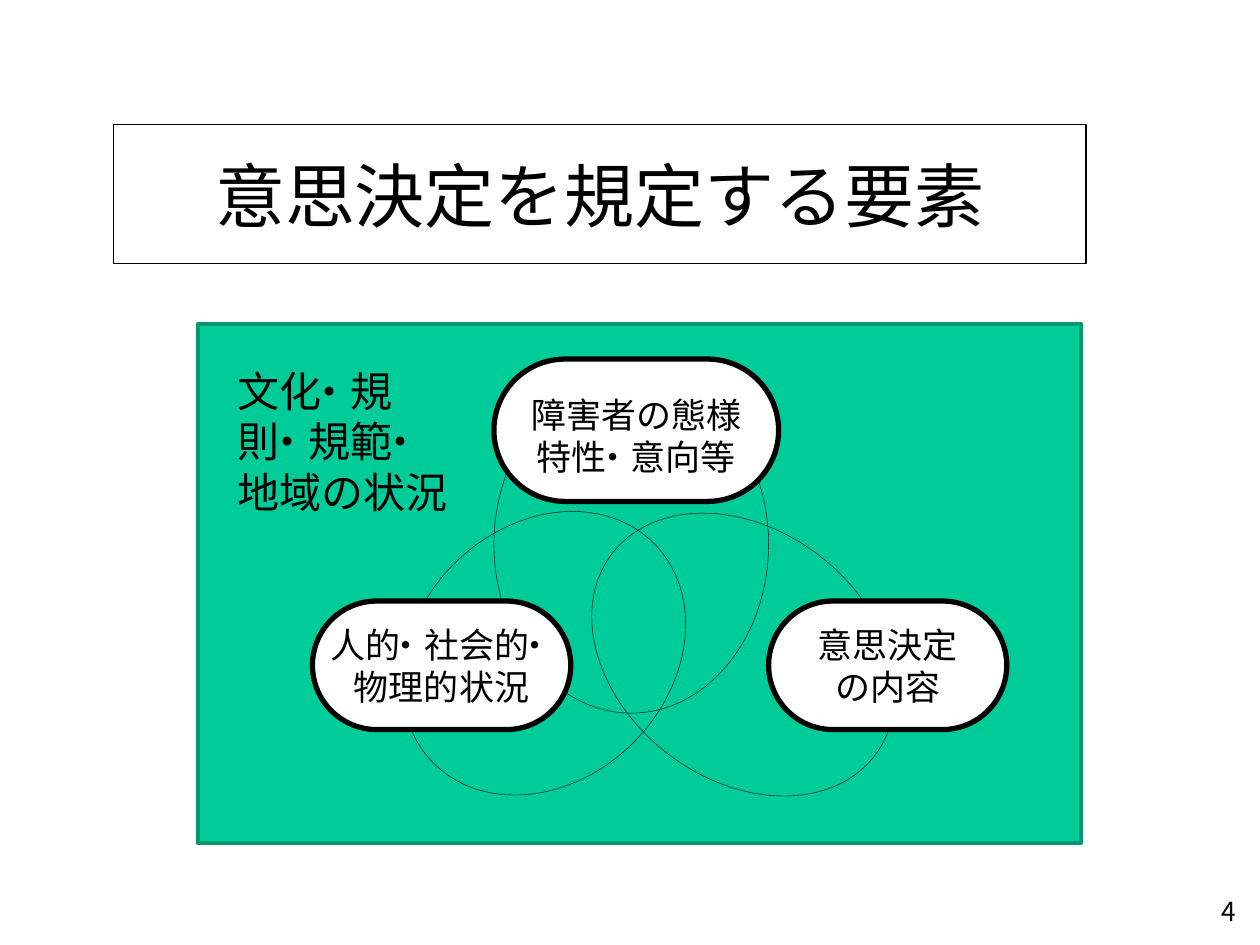
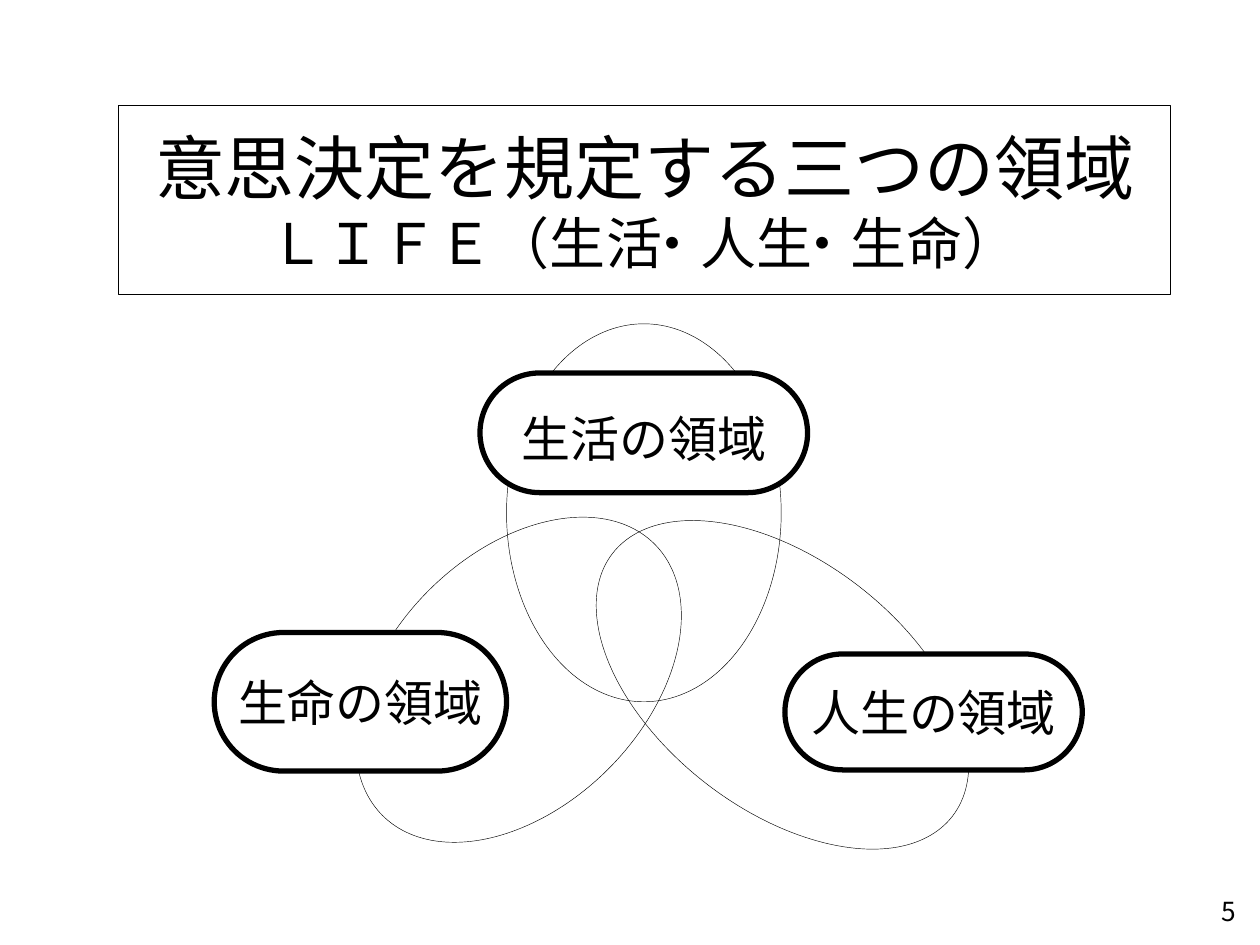
from itertools import groupby

from pptx import Presentation
from pptx.dml.color import RGBColor
from pptx.enum.shapes import MSO_SHAPE as Kind
from pptx.enum.text import MSO_ANCHOR as Anchor, PP_ALIGN as Align
from pptx.util import Inches, Pt

BLACK = RGBColor(0x00, 0x00, 0x00)
WHITE = RGBColor(0xFF, 0xFF, 0xFF)
GREEN = RGBColor(0x00, 0xCC, 0x99)
DARK = RGBColor(0x00, 0x97, 0x71)
SERIF, SANS = "Times New Roman", "Noto Sans CJK JP"
DOT = "・"

deck = Presentation()
deck.slide_width, deck.slide_height = Inches(10), Inches(7.5)
UNIT = deck.slide_width / 100  # grid of 100 columns by 75 rows


def draw(slide, kind, box, fill=None, line=BLACK, width=0.25):
    shape = slide.shapes.add_shape(kind, *[round(v * UNIT) for v in box])
    shape.shadow.inherit = False
    if fill is None:
        shape.fill.background()
    else:
        shape.fill.solid()
        shape.fill.fore_color.rgb = fill
    shape.line.color.rgb = line
    shape.line.width = Pt(width)
    return shape


def write(shape, lines, align=Align.CENTER, anchor=Anchor.MIDDLE, font=SERIF, wrap=True):
    frame = shape.text_frame
    frame.word_wrap = wrap
    frame.vertical_anchor = anchor
    for rank, (text, size) in enumerate(lines):
        para = frame.add_paragraph() if rank else frame.paragraphs[0]
        para.alignment = align
        para.font.name = font
        para.font.size = Pt(size)
        para.font.color.rgb = BLACK
        # Close up the wide gaps on both sides of each middle dot
        pairs = zip(text, text[1:] + " ")
        for tight, group in groupby(pairs, lambda pair: DOT in pair):
            run = para.add_run()
            run.text = "".join(char for char, after in group)
            if tight:
                run._r.get_or_add_rPr().set("spc", str(-32 * size))


# Each ring is a box and a turn; each pill is a box and its lines.
# The first ring and pill stand on top.
pages = [
    dict(
        number="4",
        title=[("意思決定を規定する要素", 40)],
        frame=(9, 9.9, 77.2, 11),
        panel=(15.7, 25.7, 70.1, 41.2),
        note="文化・規則・規範・地域の状況",
        size=20,
        rings=[((39.2, 29.8, 21.8, 26.8), 0),
               ((49.1, 38.8, 19.8, 26.3), 127.7),
               ((33.1, 39.5, 20.1, 24.7), 45.1)],
        pills=[((39.2, 28.5, 22.6, 11.3), ["障害者の態様", "特性・意向等"]),
               ((24.8, 47.7, 20.5, 10.2), ["人的・社会的・", "物理的状況"]),
               ((61, 47.7, 18.9, 10.2), ["意思決定", "の内容"])],
    ),
    dict(
        number="5",
        title=[("意思決定を規定する三つの領域", 40), ("ＬＩＦＥ（生活・人生・生命）", 32)],
        frame=(9.4, 8.4, 83.5, 15),
        panel=None,
        size=28,
        rings=[((40.2, 25.7, 21.8, 30), 0),
               ((52.2, 37.3, 19.8, 34.1), 127.7),
               ((31.1, 38.7, 20.1, 30.5), 45.1)],
        pills=[((38.1, 29.6, 26, 9.5), ["生活の領域"]),
               ((17, 50.2, 23.2, 11), ["生命の領域"]),
               ((62.3, 51.9, 23.6, 9.2), ["人生の領域"])],
    ),
]

for page in pages:
    slide = deck.slides.add_slide(deck.slide_layouts[6])

    # Background panel
    if page["panel"]:
        draw(slide, Kind.RECTANGLE, page["panel"], GREEN, DARK, 2)

    # Page number
    spot = slide.shapes.add_textbox(*[round(v * UNIT) for v in (78.3, 70.6, 20.8, 3.4)])
    write(spot, [(page["number"], 15)], Align.RIGHT, Anchor.TOP, SANS)

    # Title box
    write(draw(slide, Kind.RECTANGLE, page["frame"], width=0.75), page["title"])

    # Overlapping rings
    for box, turn in page["rings"]:
        draw(slide, Kind.OVAL, box).rotation = turn

    # Pill labels, the top one with its text set a little lower
    for rank, (box, lines) in enumerate(page["pills"]):
        pill = draw(slide, Kind.ROUNDED_RECTANGLE, box, WHITE, width=3)
        pill.adjustments[0] = 0.5
        write(pill, [(text, page["size"]) for text in lines], wrap=False)
        if rank == 0:
            pill.text_frame.margin_top = Inches(0.13)

    # Note on the panel
    if page["panel"]:
        note = slide.shapes.add_textbox(*[round(v * UNIT) for v in (17.9, 28.5, 18.9, 13.1)])
        write(note, [(page["note"], 24)], Align.LEFT, Anchor.TOP)

deck.save("out.pptx")
